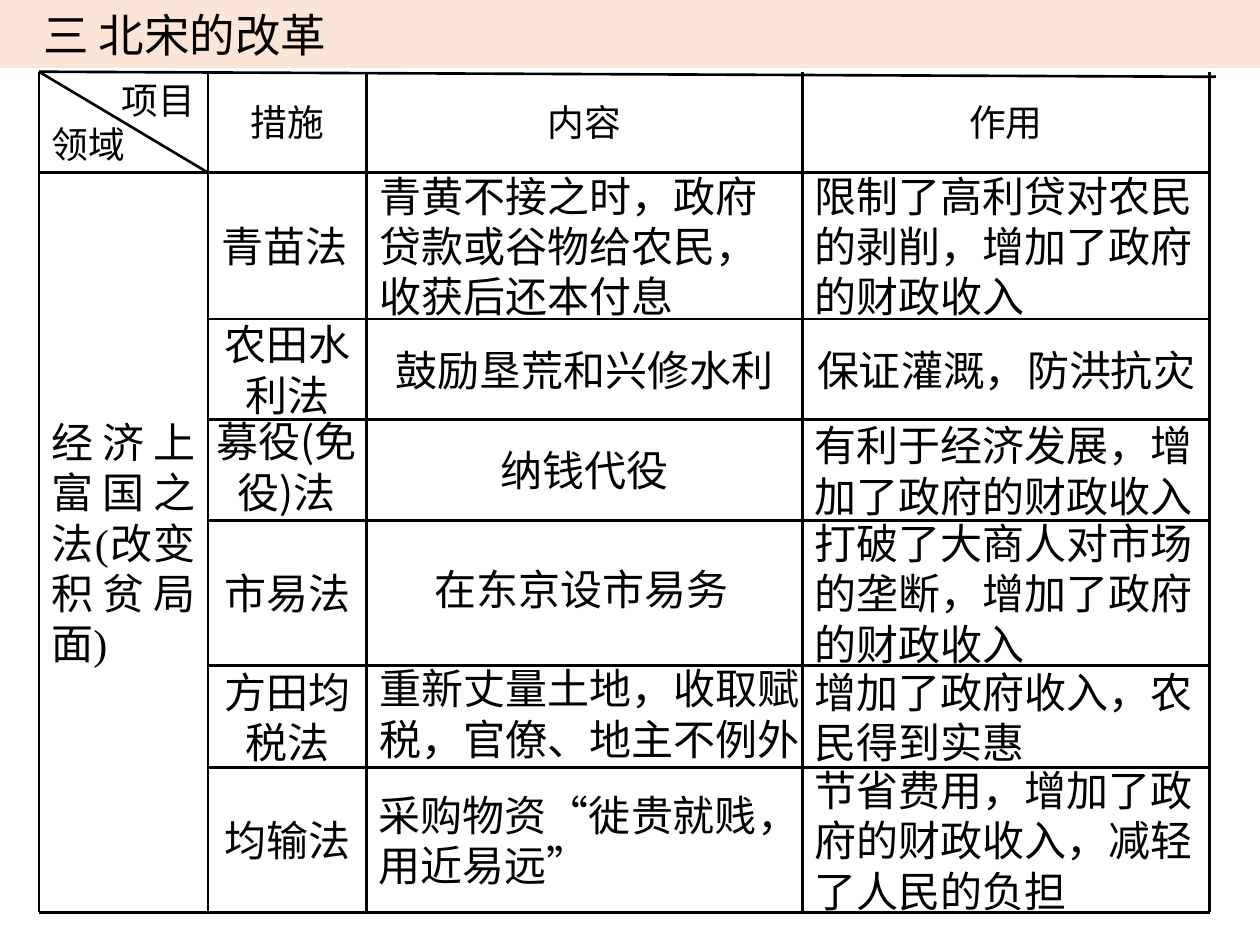
"""Build the slide on the Northern Song reforms: a ruled grid of measures, contents and effects."""
from dataclasses import dataclass

from lxml import etree
from pptx import Presentation
from pptx.dml.color import RGBColor
from pptx.enum.shapes import MSO_CONNECTOR as Connector, MSO_SHAPE as Shape
from pptx.enum.text import MSO_ANCHOR as Anchor, PP_ALIGN as Align
from pptx.oxml.ns import qn
from pptx.util import Pt


@dataclass(frozen=True)
class Theme:
    ink: RGBColor = RGBColor(0, 0, 0)
    band: RGBColor = RGBColor(0xFB, 0xE5, 0xD6)
    sans: str = "Noto Sans CJK SC"
    serif: str = "Times New Roman"
    title: int = 26
    header: int = 21
    body: int = 24
    rule: float = 1.5
    leading: float = 1.2


theme = Theme()
L, C, R, J = Align.LEFT, Align.CENTER, Align.RIGHT, Align.JUSTIFY

deck = Presentation()
deck.slide_width, deck.slide_height = Pt(720), Pt(540)
slide = deck.slides.add_slide(deck.slide_layouts[6])


def write(shape, lines, size, face):
    frame = shape.text_frame
    frame.word_wrap = True
    frame.vertical_anchor = Anchor.MIDDLE
    for number, (text, align) in enumerate(lines):
        paragraph = frame.add_paragraph() if number else frame.paragraphs[0]
        paragraph.alignment = align
        paragraph.line_spacing = Pt(size * theme.leading)
        run = paragraph.add_run()
        run.text = text
        for name, value in {"name": face, "size": Pt(size)}.items():
            setattr(run.font, name, value)
        run.font.color.rgb = theme.ink
        east_asian = etree.SubElement(run.font._element, qn("a:ea"))
        east_asian.set("typeface", theme.sans)


def rule(x1, y1, x2, y2):
    line = slide.shapes.add_connector(Connector.STRAIGHT, Pt(x1), Pt(y1), Pt(x2), Pt(y2))
    line.line.color.rgb = theme.ink
    line.line.width = Pt(theme.rule)
    etree.SubElement(line._element.spPr, qn("a:effectLst"))


banner = slide.shapes.add_shape(Shape.RECTANGLE, 0, 0, Pt(720), Pt(38.9))
banner.shadow.inherit = False
banner.fill.solid()
banner.fill.fore_color.rgb = theme.band
banner.line.fill.background()
write(banner, [("三 北宋的改革", L)], theme.title, theme.sans)
banner.text_frame.margin_left = Pt(24.6)

columns = [22.3, 118.8, 209.5, 458.6, 691.2]
rows = [41, 98.6, 182.2, 239.8, 297.4, 380.2, 438.5, 521.3]
left, right, top, bottom = columns[0], columns[-1], rows[0], rows[-1]

headers = [
    [("项目", R), ("领域", L)],
    [("措施", C)],
    [("内容", C)],
    [("作用", C)],
]
reforms = [
    [("青苗法", C), ("青黄不接之时，政府贷款或谷物给农民，收获后还本付息", L),
     ("限制了高利贷对农民的剥削，增加了政府的财政收入", L)],
    [("农田水利法", C), ("鼓励垦荒和兴修水利", C), ("保证灌溉，防洪抗灾", C)],
    [("募役(免役)法", C), ("纳钱代役", C), ("有利于经济发展，增加了政府的财政收入", L)],
    [("市易法", C), ("在东京设市易务", C), ("打破了大商人对市场的垄断，增加了政府的财政收入", L)],
    [("方田均税法", C), ("重新丈量土地，收取赋税，官僚、地主不例外", L),
     ("增加了政府收入，农民得到实惠", L)],
    [("均输法", C), ("采购物资“徙贵就贱，用近易远”", L),
     ("节省费用，增加了政府的财政收入，减轻了人民的负担", L)],
]
adjusted_boxes = {
    (1, 1): (118.8, 98.6, 87.1, 83.6),
    (1, 2): (209.5, 98.6, 252.7, 83.6),
    (3, 1): (108.7, 237.6, 110.2, 57.6),
    (4, 2): (216, 316.1, 232.6, 41),
    (5, 2): (209.5, 378.7, 260.6, 57.6),
}

cells = [(0, column, 1, lines, theme.header, theme.serif) for column, lines in enumerate(headers)]
cells.append((1, 0, len(reforms), [("经济上富国之法(改变积贫局面)", J)], theme.body, theme.serif))
for row, reform in enumerate(reforms, 1):
    for column, entry in enumerate(reform, 1):
        cells.append((row, column, 1, [entry], theme.body, theme.sans))

for row, column, span, lines, size, face in cells:
    x, y = columns[column], rows[row]
    grid_box = (x, y, columns[column + 1] - x, rows[row + span] - y)
    box = adjusted_boxes.get((row, column), grid_box)
    write(slide.shapes.add_textbox(*map(Pt, box)), lines, size, face)

for x in columns:
    rule(x, top, x, bottom)
for y in rows[2:-1]:
    rule(columns[1], y, right, y)
for y in (rows[1], bottom):
    rule(left, y, right, y)
rule(left, top, 694.8, 43.9)
rule(left, top, columns[1], rows[1])

deck.save("out.pptx")
